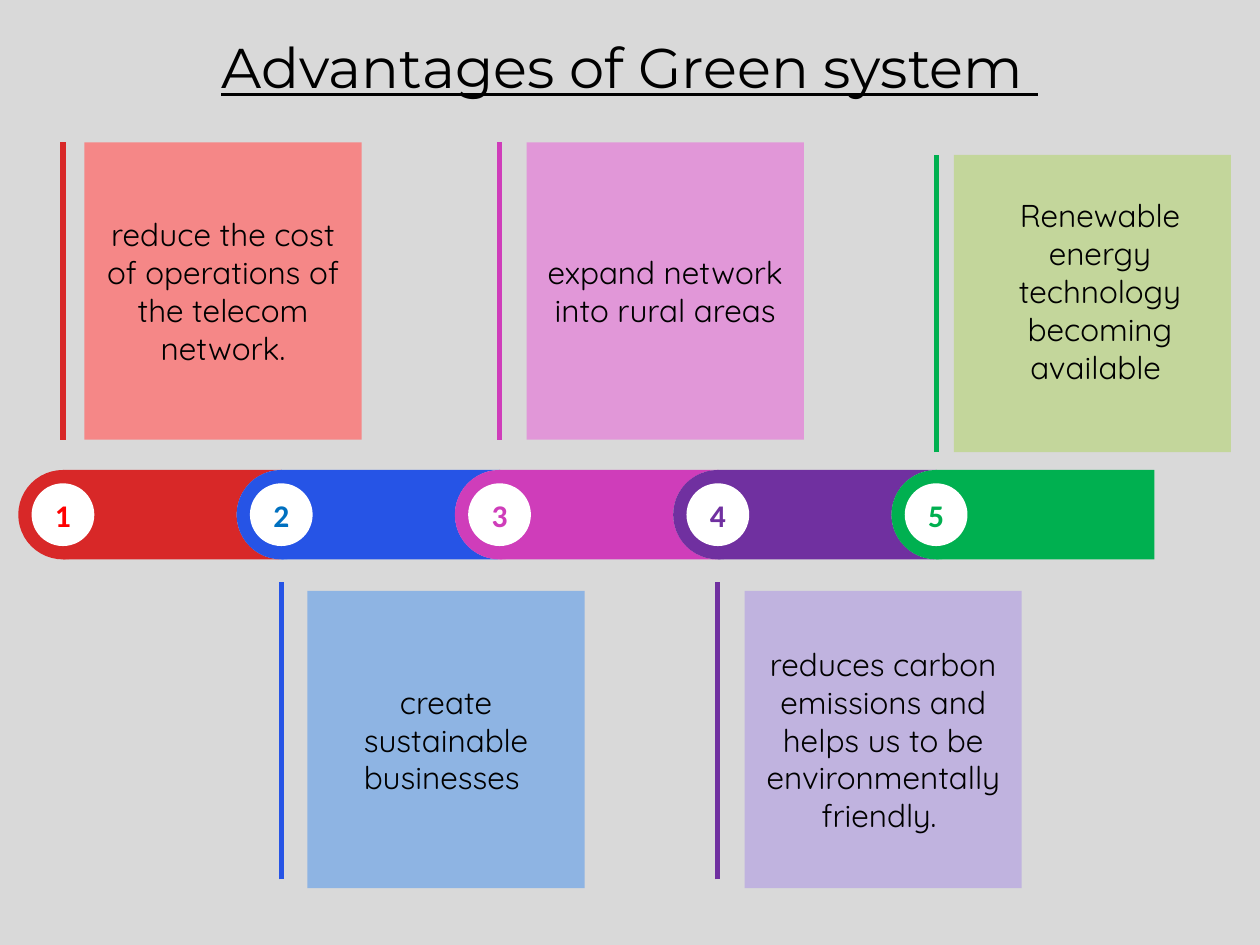
from dataclasses import dataclass
from math import cos, pi, sin

from lxml.etree import SubElement
from pptx import Presentation
from pptx.dml.color import RGBColor
from pptx.enum.shapes import MSO_CONNECTOR, MSO_SHAPE
from pptx.enum.text import MSO_ANCHOR, MSO_AUTO_SIZE, PP_ALIGN
from pptx.oxml.ns import qn
from pptx.util import Inches, Pt


@dataclass(frozen=True)
class Theme:
    background: str = "D9D9D9"
    ink: str = "000000"
    white: str = "FFFFFF"
    title_font: str = "Montserrat"
    body_font: str = "Quicksand"
    number_font: str = "Calibri"
    title_size: int = 32
    body_size: int = 18
    rule_width: int = 3
    ring_width: int = 2


@dataclass(frozen=True)
class Advantage:
    text: str
    lines: int
    color: str
    number_color: str
    card_color: str
    card_left: float
    card_top: float
    rule_top: float
    text_shift: tuple = (0, 0)


THEME = Theme()
ADVANTAGES = [
    Advantage("reduce the cost of operations of the telecom network.", 4,
              "D82828", "FF0000", "F58787", 0.67, 1.13, 1.13),
    Advantage("create sustainable businesses ", 3,
              "2654E6", "0070C0", "8EB4E3", 2.44, 4.69, 4.62),
    Advantage("expand network into rural areas", 2,
              "CF3DBA", "CF3DBA", "E197D8", 4.18, 1.13, 1.13),
    Advantage("reduces carbon emissions and helps us to be environmentally friendly. ", 5,
              "7030A0", "7030A0", "C0B3DF", 5.91, 4.69, 4.62),
    Advantage("Renewable energy technology becoming available ", 5,
              "00B050", "00B050", "C3D69B", 7.57, 1.23, 1.23, (0.06, -0.1)),
]

# Sizes in inches
SLIDE_W, SLIDE_H = 10, 7.5
BAR_LEFT, BAR_TOP, BAR_H = 0.5, 3.73, 0.71
STEP = (7.43 - BAR_LEFT) / 4
DISC = 0.47
CARD_W, CARD_H = 2.2, 2.36
LINE_H, TEXT_INSET = 0.3, 0.05


def rgb(value):
    return RGBColor.from_string(value)


def paint(shape, color):
    shape.shadow.inherit = False
    shape.fill.solid()
    shape.fill.fore_color.rgb = rgb(color)
    shape.line.fill.background()


def add_block(shapes, kind, box, color):
    block = shapes.add_shape(kind, *map(Inches, box))
    paint(block, color)
    return block


def write(frame, text, font, size, color, bold=False, underline=False):
    frame.text = text
    paragraph = frame.paragraphs[0]
    paragraph.alignment = PP_ALIGN.CENTER
    style = paragraph.runs[0].font
    style.name, style.size, style.color.rgb = font, Pt(size), rgb(color)
    style.bold, style.underline = bold, underline


def add_label(shapes, box, text, font, size, underline=False):
    frame = shapes.add_textbox(*map(Inches, box)).text_frame
    frame.word_wrap = True
    frame.auto_size = MSO_AUTO_SIZE.SHAPE_TO_FIT_TEXT
    write(frame, text, font, size, THEME.ink, underline=underline)


def add_notched_bar(shapes, box, color):
    """Bar whose right end is hollowed by a half circle for the next step."""
    left, top, width, height = box
    right, radius, parts = left + width, height / 2, 24
    notch = [(right - radius * sin(pi * n / parts),
              top + radius - radius * cos(pi * n / parts)) for n in range(parts + 1)]
    outline = notch + [(left, top + height)]
    builder = shapes.build_freeform(Inches(left), Inches(top))
    builder.add_line_segments([(Inches(x), Inches(y)) for x, y in outline], close=True)
    paint(builder.convert_to_shape(), color)


def add_step(slide, box, number, advantage, is_last):
    """Timeline segment: bar, rounded left end and numbered disc."""
    left, top, width, height = box
    shapes = slide.shapes.add_group_shape().shapes
    if is_last:
        add_block(shapes, MSO_SHAPE.RECTANGLE, box, advantage.color)
    else:
        add_notched_bar(shapes, box, advantage.color)
    add_block(shapes, MSO_SHAPE.OVAL, (left - height / 2, top, height, height), advantage.color)

    disc_box = (left - DISC / 2, top + (height - DISC) / 2, DISC, DISC)
    disc = add_block(shapes, MSO_SHAPE.OVAL, disc_box, THEME.white)
    disc.line.color.rgb = rgb(THEME.white)
    disc.line.width = Pt(THEME.ring_width)
    disc.text_frame.vertical_anchor = MSO_ANCHOR.MIDDLE
    write(disc.text_frame, str(number), THEME.number_font, THEME.body_size,
          advantage.number_color, bold=True)


def add_rule(slide, x, top, height, color):
    rule = slide.shapes.add_connector(
        MSO_CONNECTOR.STRAIGHT, Inches(x), Inches(top + height), Inches(x), Inches(top))
    rule.line.color.rgb = rgb(color)
    rule.line.width = Pt(THEME.rule_width)
    SubElement(rule._element.spPr, qn("a:effectLst"))


def add_card(slide, box, advantage):
    """Coloured card with its text centred, apart from the given shift."""
    left, top, width, height = box
    add_block(slide.shapes, MSO_SHAPE.RECTANGLE, box, advantage.card_color)
    shift_x, shift_y = advantage.text_shift
    text_h = advantage.lines * LINE_H + 2 * TEXT_INSET
    text_top = top + (height - text_h) / 2 + shift_y
    add_label(slide.shapes, (left + shift_x, text_top, width, text_h),
              advantage.text, THEME.body_font, THEME.body_size)


def main():
    deck = Presentation()
    deck.slide_width, deck.slide_height = Inches(SLIDE_W), Inches(SLIDE_H)
    slide = deck.slides.add_slide(deck.slide_layouts[6])
    add_block(slide.shapes, MSO_SHAPE.RECTANGLE, (0, 0, SLIDE_W, SLIDE_H), THEME.background)

    # Timeline
    for index, advantage in enumerate(ADVANTAGES):
        add_step(slide, (BAR_LEFT + index * STEP, BAR_TOP, STEP, BAR_H),
                 index + 1, advantage, advantage is ADVANTAGES[-1])

    # Rules and cards, alternating above and below the timeline
    for index, advantage in enumerate(ADVANTAGES):
        add_rule(slide, BAR_LEFT + index * STEP, advantage.rule_top, CARD_H, advantage.color)
        add_card(slide, (advantage.card_left, advantage.card_top, CARD_W, CARD_H), advantage)

    # Title
    add_label(slide.shapes, (0, 0.21, SLIDE_W, 0.64), "Advantages of Green system ",
              THEME.title_font, THEME.title_size, underline=True)
    deck.save("out.pptx")


if __name__ == "__main__":
    main()
